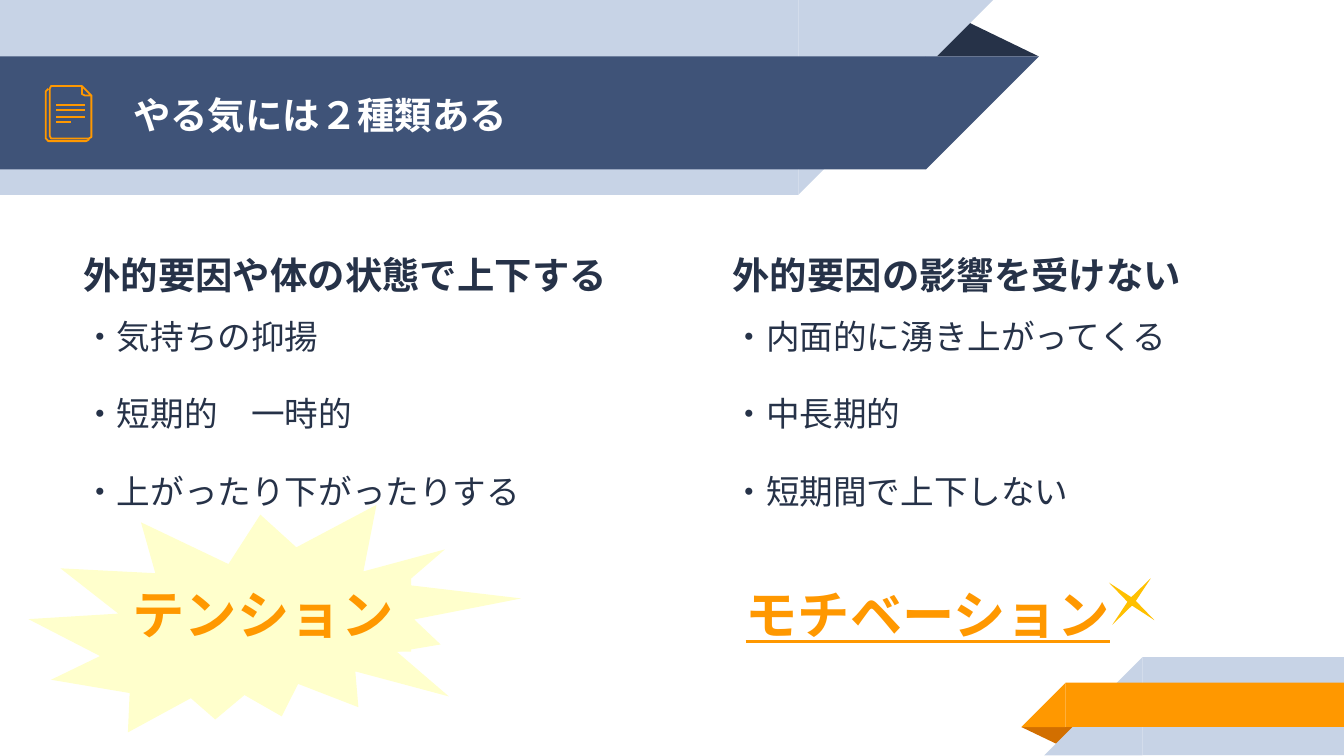
import pptx
import pptx.util
import pptx.dml.color
import pptx.enum.shapes
import pptx.enum.text
import pptx.oxml
import pptx.oxml.ns

Inches, Pt = pptx.util.Inches, pptx.util.Pt
SHAPE = pptx.enum.shapes.MSO_SHAPE
ANCHOR = pptx.enum.text.MSO_ANCHOR
FONT = "Noto Sans CJK JP"
NAVY, BLUE, PALE = "263248", "3F5378", "C7D3E6"
ORANGE, BROWN, CREAM = "FF9800", "D26F00", "FFFFCC"


def color(value):
    return pptx.dml.color.RGBColor.from_string(value)


def add_run(paragraph, text, size, fill, bold=False):
    run = paragraph.add_run()
    run.text = text
    run.font.name, run.font.size, run.font.bold = FONT, Pt(size), bold
    run.font.color.rgb = color(fill)
    fonts = run.font._element
    east_asian = pptx.oxml.parse_xml(f'<a:ea {pptx.oxml.ns.nsdecls("a")} typeface="{FONT}"/>')
    fonts.find(pptx.oxml.ns.qn("a:latin")).addnext(east_asian)
    return run


# A 16:9 slide
presentation = pptx.Presentation()
presentation.slide_width = Inches(10)
presentation.slide_height = Inches(10) * 9 // 16
slide = presentation.slides.add_slide(presentation.slide_layouts[3])
shapes = slide.shapes
title, left_body, right_body = list(slide.placeholders)

# Ribbons, burst and sparkle: kind, left, top, width, height, rotation, fill, adjustment
decorations = [
    (SHAPE.ISOSCELES_TRIANGLE, 6.88, 0.14, 0.85, 0.28, 0, NAVY, 0.32),
    (SHAPE.RECTANGLE, 0, 0, 5.94, 1.45, 0, PALE, None),
    (SHAPE.RIGHT_TRIANGLE, 5.94, 0, 1.45, 1.45, 90, PALE, None),
    (SHAPE.RECTANGLE, 0, 0.42, 6.89, 0.84, 0, BLUE, None),
    (SHAPE.RIGHT_TRIANGLE, 6.89, 0.42, 0.84, 0.84, 90, BLUE, None),
    (SHAPE.ISOSCELES_TRIANGLE, 7.6, 5.41, 0.43, 0.14, 180, BROWN, 0.32),
    (SHAPE.RECTANGLE, 8.5, 4.89, 1.5, 0.73, 0, PALE, None),
    (SHAPE.RIGHT_TRIANGLE, 7.77, 4.89, 0.73, 0.73, 270, PALE, None),
    (SHAPE.RECTANGLE, 7.93, 5.08, 2.07, 0.33, 0, ORANGE, None),
    (SHAPE.RIGHT_TRIANGLE, 7.6, 5.08, 0.33, 0.33, 270, ORANGE, None),
    (SHAPE.EXPLOSION2, 0.22, 3.68, 3.63, 1.88, 6.1, CREAM, None),
    (SHAPE.STAR_4_POINT, 8.2, 4.25, 0.44, 0.45, 39.6, "FFC000", 0.07),
]
for kind, left, top, width, height, rotation, fill, adjustment in decorations:
    shape = shapes.add_shape(kind, Inches(left), Inches(top), Inches(width), Inches(height))
    shape.rotation = rotation
    shape.shadow.inherit = False
    shape.fill.solid()
    shape.fill.fore_color.rgb = color(fill)
    shape.line.fill.background()
    if adjustment is not None:
        shape.adjustments[0] = adjustment
star = shape

# Conclusions under the two columns
for text, left, width, fill, underline in [
    ("テンション", 0.89, 2.17, CREAM, None),
    ("モチベーション", 5.45, 2.96, None, True),
]:
    label = shapes.add_textbox(Inches(left), Inches(4.28), Inches(width), Inches(0.57))
    label.text_frame.word_wrap = False
    if fill:
        label.fill.solid()
        label.fill.fore_color.rgb = color(fill)
    run = add_run(label.text_frame.paragraphs[0], text, 28, ORANGE, True)
    run.font.underline = underline
shapes._spTree.append(star._element)

# Title and columns, in front of the ribbons and the burst
for placeholder, left, top, width, height, anchor in [
    (left_body, 0.52, 1.61, 4.12, 2.41, ANCHOR.TOP),
    (title, 0.89, 0.43, 5.75, 0.84, ANCHOR.MIDDLE),
    (right_body, 5.35, 1.61, 3.78, 2.41, ANCHOR.TOP),
]:
    shapes._spTree.append(placeholder._element)
    placeholder.left, placeholder.top = Inches(left), Inches(top)
    placeholder.width, placeholder.height = Inches(width), Inches(height)
    frame = placeholder.text_frame
    frame.margin_left = frame.margin_right = Inches(0.1)
    frame.margin_top = frame.margin_bottom = Inches(0.1)
    frame.word_wrap = True
    frame.auto_size = pptx.enum.text.MSO_AUTO_SIZE.NONE
    frame.vertical_anchor = anchor

heading = title.text_frame.paragraphs[0]
heading.alignment = pptx.enum.text.PP_ALIGN.LEFT
add_run(heading, "やる気には２種類ある", 20, "FFFFFF", True)

for body, lines in [
    (left_body, ["外的要因や体の状態で上下する", "・気持ちの抑揚",
                 "・短期的　一時的", "・上がったり下がったりする"]),
    (right_body, ["外的要因の影響を受けない", "・内面的に湧き上がってくる",
                  "・中長期的", "・短期間で上下しない"]),
]:
    for index, line in enumerate(lines):
        first = index == 0
        paragraph = body.text_frame.paragraphs[0] if first else body.text_frame.add_paragraph()
        paragraph.line_spacing = 1.5 if first else 1.0
        paragraph.space_before = Pt(6 if first else 10)
        paragraph.space_after = Pt(0 if first else 10)
        properties = paragraph._p.get_or_add_pPr()
        properties.set("marL", "0")
        properties.set("indent", "0")
        properties.append(pptx.oxml.parse_xml(f'<a:buNone {pptx.oxml.ns.nsdecls("a")}/>'))
        add_run(paragraph, line, 20 if first else 18, NAVY, first)

# Document icon: back page, front page, folded corner
outlines = [
    ([(0.66, 1.03), (0.66, 1.04), (0.64, 1.05), (0.36, 1.05), (0.34, 1.03),
      (0.34, 0.68), (0.35, 0.67), (0.36, 0.66)], False),
    ([(0.68, 0.71), (0.68, 1.01), (0.68, 1.02), (0.66, 1.03), (0.38, 1.03),
      (0.37, 1.01), (0.37, 0.66), (0.38, 0.64), (0.61, 0.64)], False),
    ([(0.61, 0.7), (0.61, 0.64), (0.68, 0.71), (0.63, 0.71)], True),
]
icon_parts = []
for points, closed in outlines:
    corners = [(Inches(x), Inches(y)) for x, y in points]
    builder = shapes.build_freeform(*corners[0])
    builder.add_line_segments(corners[1:], close=closed)
    outline = builder.convert_to_shape()
    outline.fill.background()
    icon_parts.append(outline)

# Document icon: lines of writing
for right, y in [(0.63, 0.78), (0.63, 0.82), (0.63, 0.87), (0.53, 0.91)]:
    icon_parts.append(shapes.add_connector(
        pptx.enum.shapes.MSO_CONNECTOR.STRAIGHT,
        Inches(0.42), Inches(y), Inches(right), Inches(y)))
for part in icon_parts:
    part.line.color.rgb = color(ORANGE)
    part.line.width = Pt(0.96)
    part._element.spPr.append(
        pptx.oxml.parse_xml(f'<a:effectLst {pptx.oxml.ns.nsdecls("a")}/>'))

presentation.save("out.pptx")
